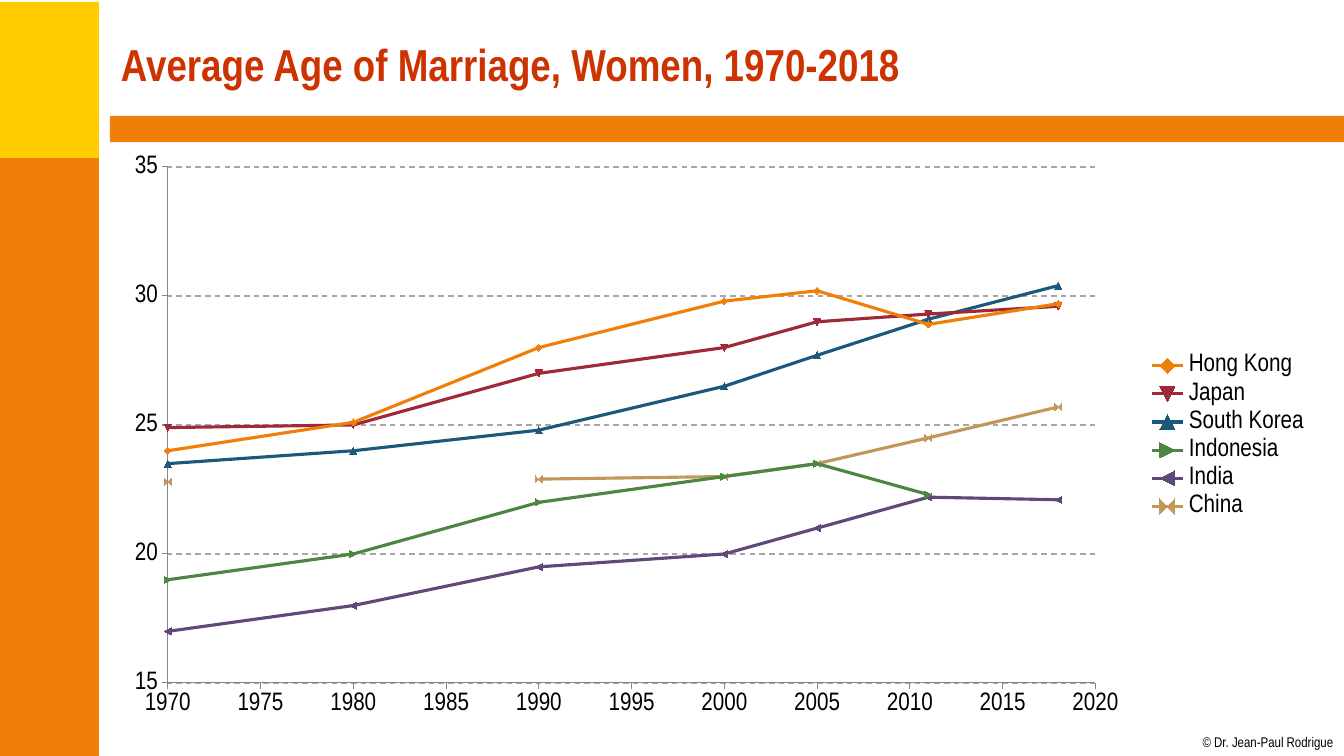
from lxml import etree
from pptx import Presentation
from pptx import util as u
from pptx.chart import data
from pptx.dml.color import RGBColor
from pptx.enum import chart as charts, dml, shapes, text
from pptx.oxml import ns

YELLOW = RGBColor(0xFF, 0xCC, 0x00)
ORANGE = RGBColor(0xF0, 0x7F, 0x09)
RED = RGBColor(0xCC, 0x33, 0x00)
BLACK = RGBColor(0, 0, 0)
GRID_GRAY = RGBColor(0xA6, 0xA6, 0xA6)
AXIS_GRAY = RGBColor(0x86, 0x86, 0x86)
FONT = "Arial Narrow"

YEARS = (1970, 1980, 1990, 2000, 2005, 2011, 2018)
COUNTRIES = (
    ("Hong Kong", ORANGE, (24, 25.1, 28, 29.8, 30.2, 28.9, 29.7)),
    ("Japan", RGBColor(0x9F, 0x29, 0x36), (24.9, 25, 27, 28, 29, 29.3, 29.6)),
    ("South Korea", RGBColor(0x1B, 0x58, 0x7C), (23.5, 24, 24.8, 26.5, 27.7, 29.1, 30.4)),
    ("Indonesia", RGBColor(0x4E, 0x85, 0x42), (19, 20, 22, 23, 23.5, 22.3, None)),
    ("India", RGBColor(0x60, 0x48, 0x78), (17, 18, 19.5, 20, 21, 22.2, 22.1)),
    ("China", RGBColor(0xC1, 0x98, 0x59), (22.8, None, 22.9, 23, 23.5, 24.5, 25.7)),
)


class SlideBuilder:
    def __init__(self, slide):
        self.slide = slide

    def style(self, font, size, color=BLACK, bold=False):
        font.name, font.size, font.bold = FONT, u.Pt(size), bold
        font.color.rgb = color

    def bar(self, left, top, width, height, color):
        shape = self.slide.shapes.add_shape(
            shapes.MSO_SHAPE.RECTANGLE, *map(u.Pt, (left, top, width, height)))
        shape.shadow.inherit = False
        shape.fill.solid()
        shape.fill.fore_color.rgb = color
        shape.line.fill.background()

    def title(self, wording, left, top, width, height):
        title = self.slide.shapes.title
        title.left, title.top, title.width, title.height = map(u.Pt, (left, top, width, height))
        title.text_frame.text = wording
        title.text_frame.vertical_anchor = text.MSO_ANCHOR.MIDDLE
        paragraph = title.text_frame.paragraphs[0]
        paragraph.alignment = text.PP_ALIGN.LEFT
        self.style(paragraph.font, 32, RED, True)

    def credit(self, wording, left, top, width, height):
        box = self.slide.shapes.add_textbox(*map(u.Pt, (left, top, width, height)))
        frame = box.text_frame
        frame.margin_left = frame.margin_right = frame.margin_top = frame.margin_bottom = 0
        frame.word_wrap = False
        frame.auto_size = text.MSO_AUTO_SIZE.SHAPE_TO_FIT_TEXT
        frame.text = wording
        self.style(frame.paragraphs[0].font, 10)

    def axis(self, axis, minimum, maximum):
        axis.minimum_scale, axis.maximum_scale, axis.major_unit = minimum, maximum, 5
        axis.major_tick_mark = charts.XL_TICK_MARK.OUTSIDE
        axis.minor_tick_mark = charts.XL_TICK_MARK.NONE
        axis.tick_labels.number_format = "0"
        axis.tick_labels.number_format_is_linked = False
        axis.format.line.color.rgb = AXIS_GRAY
        axis.has_major_gridlines = False

    def plot_layout(self, chart, **fractions):
        plot_area = chart.plots[0]._element.getparent()
        for old in plot_area.findall(ns.qn("c:layout")):
            plot_area.remove(old)
        layout = etree.Element(ns.qn("c:layout"))
        manual = etree.SubElement(layout, ns.qn("c:manualLayout"))
        settings = {"layoutTarget": "inner", "xMode": "edge", "yMode": "edge", **fractions}
        for name, value in settings.items():
            etree.SubElement(manual, ns.qn("c:" + name)).set("val", str(value))
        plot_area.insert(0, layout)

    def scatter(self, left, top, width, height):
        chart_data = data.XyChartData()
        for name, _, ages in COUNTRIES:
            country = chart_data.add_series(name)
            for year, age in zip(YEARS, ages):
                country.add_data_point(year, age)
        chart = self.slide.shapes.add_chart(
            charts.XL_CHART_TYPE.XY_SCATTER_LINES,
            *map(u.Pt, (left, top, width, height)), chart_data).chart
        self.style(chart.font, 18)
        chart.has_title = False
        chart.has_legend = True
        chart.legend.position = charts.XL_LEGEND_POSITION.RIGHT
        chart.legend.include_in_layout = False
        self.axis(chart.category_axis, 1970, 2020)
        self.axis(chart.value_axis, 15, 35)
        chart.value_axis.has_major_gridlines = True
        grid = chart.value_axis.major_gridlines.format.line
        grid.color.rgb, grid.width = GRID_GRAY, u.Pt(1)
        grid.dash_style = dml.MSO_LINE.DASH
        plot = chart.plots[0]
        plot.vary_by_categories = False
        for series, (_, color, _) in zip(plot.series, COUNTRIES):
            series.smooth = False
            series.format.line.color.rgb = color
            series.format.line.width = u.Pt(2.25)
            series.marker.size = 5
            series.marker.format.fill.solid()
            series.marker.format.fill.fore_color.rgb = color
            series.marker.format.line.color.rgb = color
            for point in series._element.findall(".//" + ns.qn("c:pt")):
                if point.findtext(ns.qn("c:v")) in ("None", ""):
                    point.getparent().remove(point)
        self.plot_layout(chart, x=0.047, y=0.039, w=0.767, h=0.884)


def main():
    presentation = Presentation()
    presentation.slide_width, presentation.slide_height = u.Pt(960), u.Pt(540)
    builder = SlideBuilder(presentation.slides.add_slide(presentation.slide_layouts[5]))
    builder.bar(-1.4, 1.4, 72, 113.8, YELLOW)
    builder.bar(-1.4, 113, 72, 427, ORANGE)
    builder.bar(78.5, 82.8, 881.5, 18.7, ORANGE)
    builder.credit("© Dr. Jean-Paul Rodrigue", 859, 524, 94.3, 12.2)
    builder.title("Average Age of Marriage, Women, 1970-2018", 79.2, 8, 864, 75)
    builder.scatter(79.2, 103, 864, 417)
    presentation.save("out.pptx")


if __name__ == "__main__":
    main()
